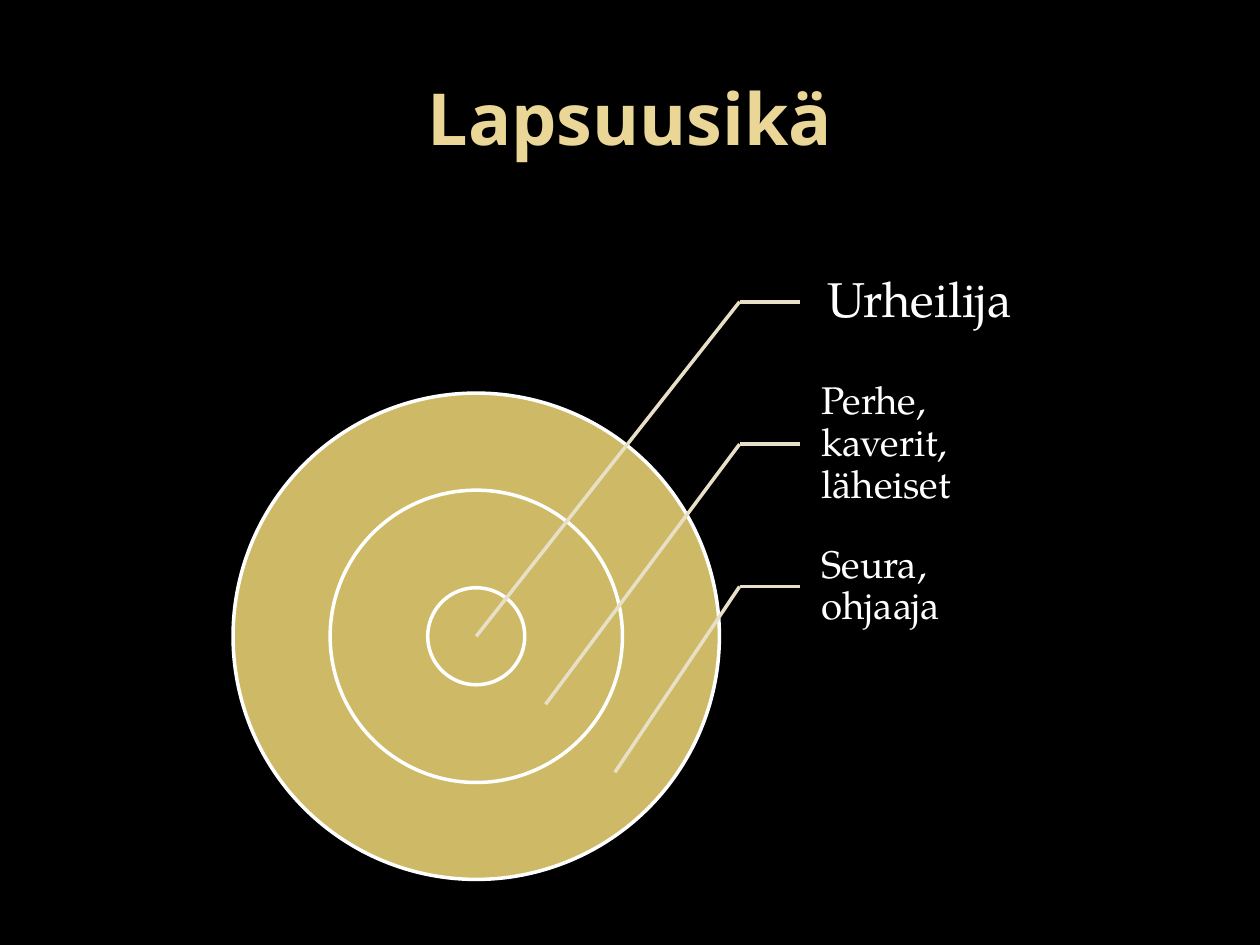
"""Build the Lapsuusikä slide: three concentric circles with callout labels."""
from lxml import etree
from pptx import Presentation
from pptx.dml.color import RGBColor
from pptx.enum.shapes import MSO_CONNECTOR, MSO_SHAPE
from pptx.enum.text import MSO_ANCHOR, PP_ALIGN
from pptx.oxml.ns import qn
from pptx.util import Inches, Pt

BLACK = RGBColor(0x00, 0x00, 0x00)
WHITE = RGBColor(0xFF, 0xFF, 0xFF)
GOLD = RGBColor(0xCE, 0xB9, 0x66)
PALE_GOLD = RGBColor(0xEA, 0xD6, 0x96)
CREAM = RGBColor(0xE8, 0xE0, 0xC6)

CENTER_X, CENTER_Y = 3.78, 5.05
ELBOW_X, LABEL_X = 5.87, 6.35
LABEL_TOP, LABEL_WIDTH, LABEL_HEIGHT = 1.83, 1.93, 1.13


def format_text(frame, text, size, font, color, **paragraph_format):
    frame.word_wrap = True
    frame.vertical_anchor = MSO_ANCHOR.MIDDLE
    paragraph = frame.paragraphs[0]
    for name, value in paragraph_format.items():
        setattr(paragraph, name, value)
    run = paragraph.add_run()
    run.text = text
    for name, value in {"size": Pt(size), "name": font}.items():
        setattr(run.font, name, value)
    run.font.color.rgb = color
    return run


def add_leader(shapes, start_x, start_y, end_x, end_y):
    leader = shapes.add_connector(
        MSO_CONNECTOR.STRAIGHT,
        Inches(start_x), Inches(start_y), Inches(end_x), Inches(end_y))
    leader.line.color.rgb = CREAM
    leader.line.width = Pt(2)
    etree.SubElement(leader.element.spPr, qn("a:effectLst"))


presentation = Presentation()
presentation.slide_width = Inches(10)
presentation.slide_height = Inches(7.5)
slide = presentation.slides.add_slide(presentation.slide_layouts[5])
slide.background.fill.solid()
slide.background.fill.fore_color.rgb = BLACK

heading = slide.shapes.title
heading_place = {"left": 0.5, "top": 0.3, "width": 9, "height": 1.25}
for name, value in heading_place.items():
    setattr(heading, name, Inches(value))
heading_run = format_text(heading.text_frame, "Lapsuusikä", 41, "Noto Sans",
                          PALE_GOLD, alignment=PP_ALIGN.CENTER)
heading_run.font.bold = True

for diameter in (3.86, 2.32, 0.77):
    ring = slide.shapes.add_shape(
        MSO_SHAPE.OVAL,
        Inches(CENTER_X - diameter / 2), Inches(CENTER_Y - diameter / 2),
        Inches(diameter), Inches(diameter))
    ring.shadow.inherit = False
    ring.fill.solid()
    ring.fill.fore_color.rgb = GOLD
    ring.line.color.rgb = WHITE
    ring.line.width = Pt(2)

circle_labels = [
    ("Urheilija", 28, 0.22, 0.04),
    ("Perhe, kaverit, läheiset", 22, 0.17, 0.03),
    ("Seura, ohjaaja", 22, 0.17, 0.03),
]
for level, (text, size, indent, margin) in enumerate(circle_labels):
    top = LABEL_TOP + level * LABEL_HEIGHT
    label = slide.shapes.add_textbox(
        Inches(LABEL_X), Inches(top), Inches(LABEL_WIDTH), Inches(LABEL_HEIGHT))
    margins = {"margin_left": indent, "margin_top": margin,
               "margin_right": margin, "margin_bottom": margin}
    for name, value in margins.items():
        setattr(label.text_frame, name, Inches(value))
    format_text(label.text_frame, text, size, "TeX Gyre Pagella", WHITE,
                alignment=PP_ALIGN.LEFT, line_spacing=0.9)

    middle = top + LABEL_HEIGHT / 2
    add_leader(slide.shapes, ELBOW_X, middle, LABEL_X, middle)
    add_leader(slide.shapes, ELBOW_X, middle,
               CENTER_X + level * 0.55, CENTER_Y + level * 0.54)

presentation.save("out.pptx")
